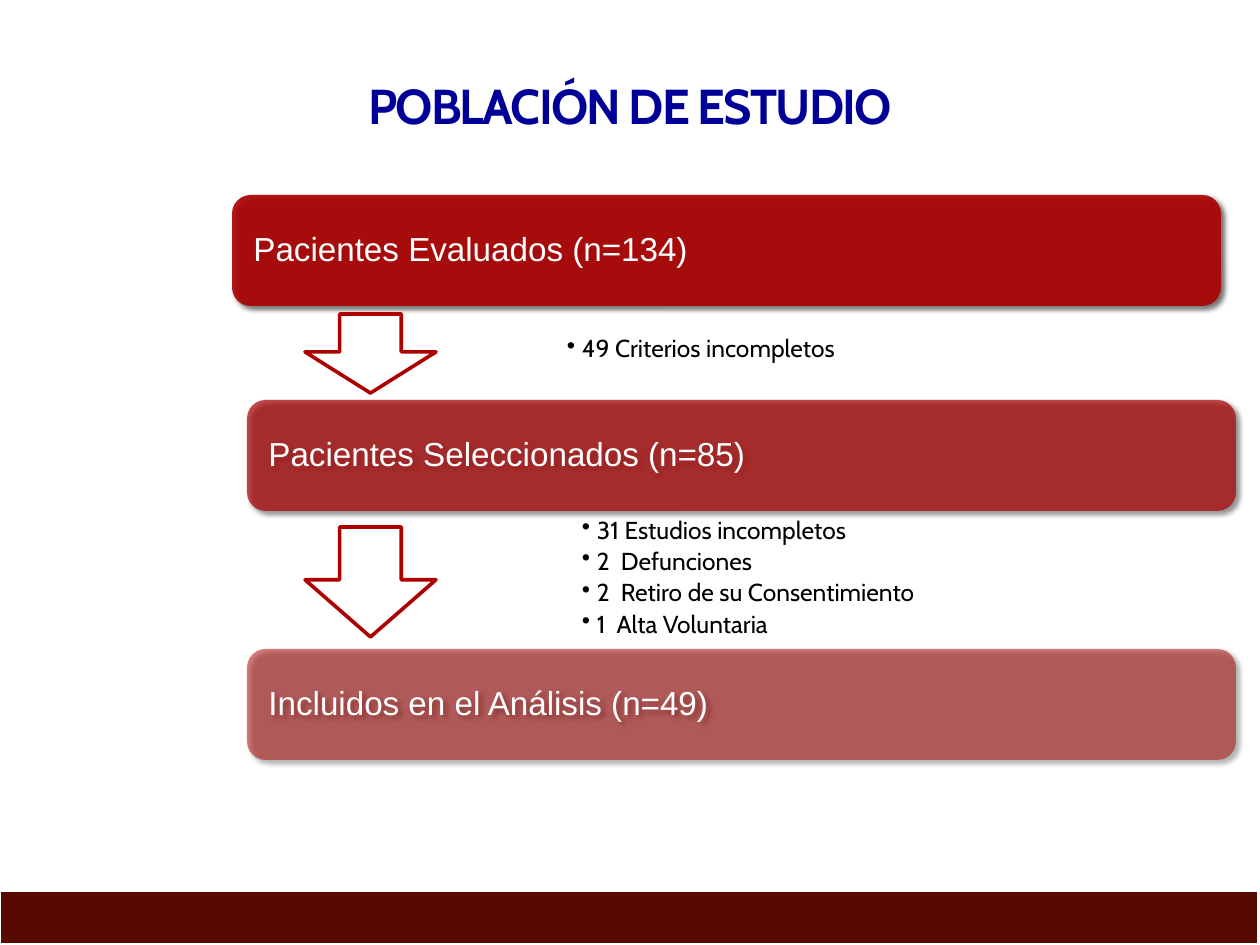
from lxml import etree
from pptx import Presentation
from pptx.dml.color import RGBColor
from pptx.enum.shapes import MSO_SHAPE
from pptx.enum.text import MSO_ANCHOR, PP_ALIGN
from pptx.oxml.ns import qn
from pptx.util import Emu, Pt

ROUND, ARROW, RECT = (MSO_SHAPE.ROUNDED_RECTANGLE, MSO_SHAPE.DOWN_ARROW,
                      MSO_SHAPE.RECTANGLE)
LEFT, CENTER = PP_ALIGN.LEFT, PP_ALIGN.CENTER
TOP, MIDDLE = MSO_ANCHOR.TOP, MSO_ANCHOR.MIDDLE
PX = 914400 // 126
RED, WHITE = "AD0101", "FFFFFF"

TITLE = "POBLACIÓN DE ESTUDIO"
# text, left, top, opacity in percent
STAGES = [
    ("Pacientes Evaluados (n=134)", 232, 195, 90),
    ("Pacientes Seleccionados (n=85)", 247, 400, 70),
    ("Incluidos en el Análisis (n=49)", 247, 649, 50),
]
# lines, box, anchor
NOTES = [
    (["49 Criterios incompletos"], (533, 301, 622, 98), MIDDLE),
    (["31 Estudios incompletos", "2  Defunciones",
      "2  Retiro de su Consentimiento", "1  Alta Voluntaria"],
     (548, 515, 620, 132), TOP),
]
ARROWS = [(314, 79), (527, 110)]  # top, height

prs = Presentation()
prs.slide_width, prs.slide_height = Emu(1260 * PX), Emu(945 * PX)
slide = prs.slides.add_slide(prs.slide_layouts[6])


def place(box):
    return [Emu(v * PX) for v in box]


def color(code):
    return RGBColor.from_string(code)


def sub(parent, tag, **attrs):
    node = etree.SubElement(parent, qn(tag))
    for key, val in attrs.items():
        node.set(key, str(val))
    return node


def draw(kind, box, fill, line=None):
    shape = slide.shapes.add_shape(kind, *place(box))
    shape.shadow.inherit = False
    shape.fill.solid()
    shape.fill.fore_color.rgb = color(fill)
    if line:
        shape.line.color.rgb = color(line)
        shape.line.width = Pt(2.08)
    else:
        shape.line.fill.background()
    return shape


def fade(shape, pct):
    """Make the fill translucent and add a soft drop shadow."""
    props = shape._element.spPr
    sub(props.find(".//" + qn("a:srgbClr")), "a:alpha", val=pct * 1000)
    glow = sub(props.find(qn("a:effectLst")), "a:outerShdw", blurRad=Pt(3),
               dist=Pt(2), dir=45 * 60000, algn="tl", rotWithShape=0)
    sub(sub(glow, "a:srgbClr", val="000000"), "a:alpha", val=60000)


def write(shape, lines, font="Arial", size=19, ink=WHITE, bold=False,
          align=LEFT, anchor=MIDDLE, inset=(16, 10, 16, 10), lead=0.9,
          after=0, track=0, bullet=False):
    frame = shape.text_frame
    frame.word_wrap = True
    frame.vertical_anchor = anchor
    (frame.margin_left, frame.margin_top,
     frame.margin_right, frame.margin_bottom) = place(inset)
    for i, line in enumerate(lines):
        par = frame.paragraphs[0] if i == 0 else frame.add_paragraph()
        par.alignment, par.line_spacing = align, lead
        par.space_after = Pt(after)
        if bullet:
            props = par._p.get_or_add_pPr()
            props.set("marL", str(15 * PX))
            props.set("indent", str(-15 * PX))
            sub(props, "a:buChar", char="•")
        run = par.add_run()
        run.text = line
        run.font.name, run.font.size, run.font.bold = font, Pt(size), bold
        run.font.color.rgb = color(ink)
        if track:
            run._r.get_or_add_rPr().set("spc", str(track * 100))


title = slide.shapes.add_textbox(*place((63, 37, 1134, 136)))
write(title, [TITLE], font="Cabin", size=28, ink="000099", bold=True,
      align=CENTER, lead=1, track=-1)

for text, left, top, pct in STAGES:
    bar = draw(ROUND, (left, top, 989, 111), RED)
    fade(bar, pct)
    write(bar, [text])

for lines, box, anchor in NOTES:
    note = slide.shapes.add_textbox(*place(box))
    write(note, lines, font="Cabin", size=14, ink="000000", anchor=anchor,
          inset=(34, 3, 14, 3), after=2.8, bullet=True)

for top, height in ARROWS:
    arrow = draw(ARROW, (305, top, 131, height), WHITE, RED)
    arrow.adjustments[0], arrow.adjustments[1] = 0.47, 0.52

draw(RECT, (-1, 890, 1260, 55), "560A00", WHITE)

prs.save("out.pptx")
